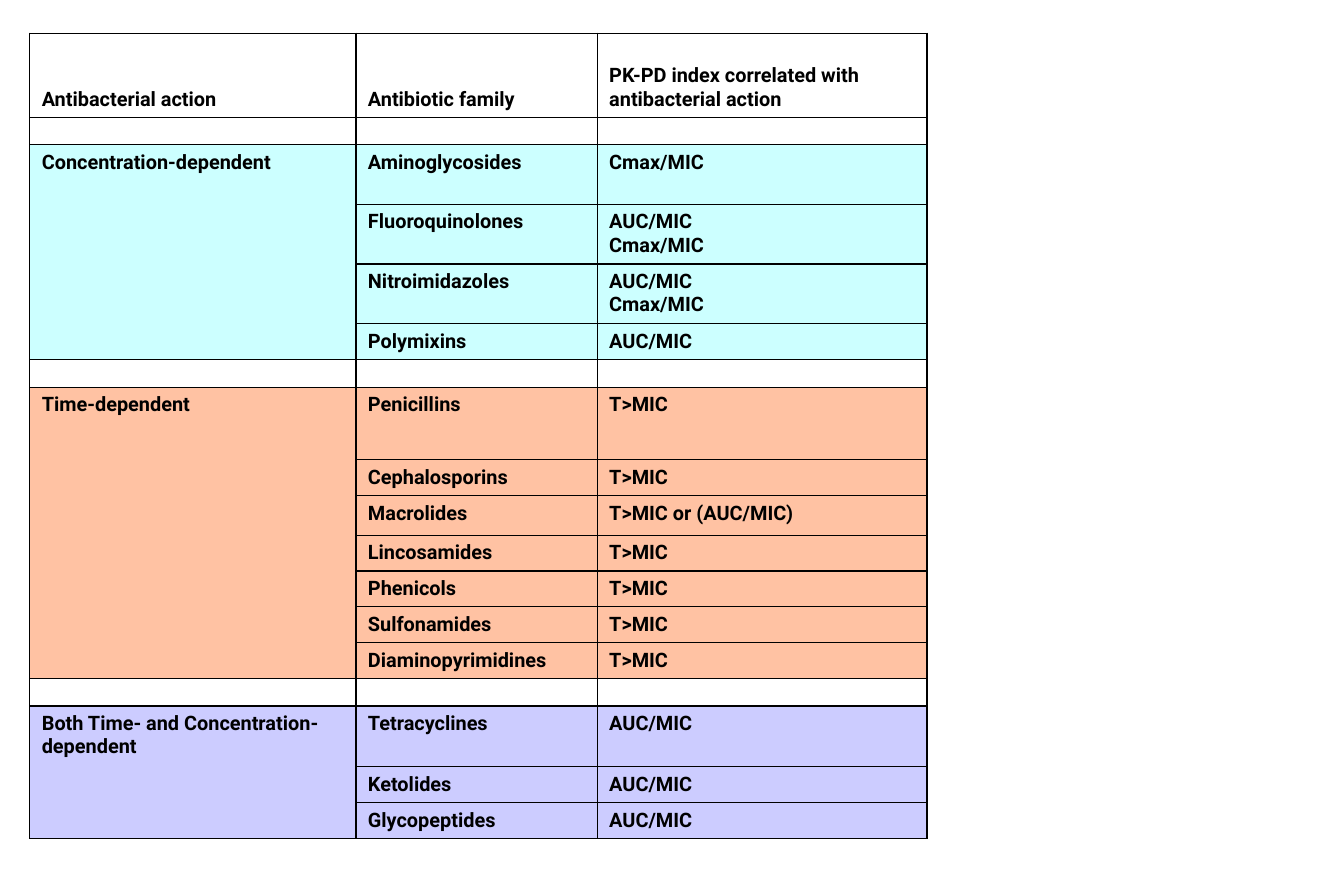
from lxml.etree import SubElement
from pptx import Presentation
from pptx.dml.color import RGBColor
from pptx.enum.text import MSO_ANCHOR as Anchor
from pptx.oxml.ns import qn
from pptx.util import Emu, Pt

BLACK = RGBColor(0x00, 0x00, 0x00)
CYAN = RGBColor(0xCC, 0xFF, 0xFF)
ORANGE = RGBColor(0xFF, 0xC2, 0xA3)
LILAC = RGBColor(0xCC, 0xCC, 0xFF)

HEADER = ["Antibacterial action", "Antibiotic family",
          "PK-PD index correlated with antibacterial action"]
HEADER_H, GAP_H = 70, 23
COLUMNS = [273, 202, 276]
GROUPS = [
    ("Concentration-dependent", CYAN, [
        ("Aminoglycosides", "Cmax/MIC", 50),
        ("Fluoroquinolones", "AUC/MIC\nCmax/MIC", 50),
        ("Nitroimidazoles", "AUC/MIC\nCmax/MIC", 50),
        ("Polymixins", "AUC/MIC", 30)]),
    ("Time-dependent", ORANGE, [
        ("Penicillins", "T>MIC", 61),
        ("Cephalosporins", "T>MIC", 30),
        ("Macrolides", "T>MIC or (AUC/MIC)", 33),
        ("Lincosamides", "T>MIC", 30),
        ("Phenicols", "T>MIC", 30),
        ("Sulfonamides", "T>MIC", 30),
        ("Diaminopyrimidines", "T>MIC", 30)]),
    ("Both Time- and Concentration-dependent", LILAC, [
        ("Tetracyclines", "AUC/MIC", 51),
        ("Ketolides", "AUC/MIC", 30),
        ("Glycopeptides", "AUC/MIC", 30)]),
]


def px(n):
    """Turn px, 100 to the inch, into EMU."""
    return Emu(n * 9144)


def set_borders(cell, top, bottom):
    """Draw black lines around a cell, with top and bottom widths in points."""
    tc_pr = cell._tc.get_or_add_tcPr()
    for side, width in (("L", 0.75), ("R", 0.75), ("T", top), ("B", bottom)):
        ln = SubElement(tc_pr, qn(f"a:ln{side}"), w=str(Pt(width)))
        fill = SubElement(ln, qn("a:solidFill"))
        SubElement(fill, qn("a:srgbClr"), val=str(BLACK))


def write_cell(cell, text, color):
    """Fill a cell and set its bold text, or shrink it when it is empty."""
    if color is None:
        cell.fill.background()
    else:
        cell.fill.solid()
        cell.fill.fore_color.rgb = color
    cell.margin_left = cell.margin_right = px(10)
    cell.margin_top = cell.margin_bottom = px(5 if text else 0)
    cell.text_frame.text = text
    for p in cell.text_frame.paragraphs:
        if not text:
            SubElement(p._p, qn("a:endParaRPr"), sz="800")
        for r in p.runs:
            r.font.name, r.font.size, r.font.bold = "Roboto", Pt(12), True
            r.font.color.rgb = BLACK


def add_index_table(s, x, y):
    """Add the table of antibiotic families at the given corner."""
    rows = [(HEADER, None, HEADER_H)]
    spans = []
    for action, color, families in GROUPS:
        rows.append(([""] * 3, None, GAP_H))
        spans.append((len(rows), len(rows) + len(families) - 1))
        for i, (family, index, h) in enumerate(families):
            rows.append(([action if i == 0 else "", family, index], color, h))
    total = sum(h for _, _, h in rows)
    table = s.shapes.add_table(len(rows), len(COLUMNS), px(x), px(y),
                               px(sum(COLUMNS)), px(total)).table
    table.first_row = table.horz_banding = False
    for column, w in zip(table.columns, COLUMNS):
        column.width = px(w)
    for first, last in spans:
        table.cell(first, 0).merge(table.cell(last, 0))
    final = spans[-1]
    for i, (texts, color, h) in enumerate(rows):
        table.rows[i].height = px(h)
        for j, text in enumerate(texts):
            cell = table.cell(i, j)
            at_end = i == final[1] or (i, j) == (final[0], 0)
            set_borders(cell, 1 if i == 0 else 0.75, 1 if at_end else 0.75)
            write_cell(cell, text, color)
            cell.vertical_anchor = Anchor.BOTTOM if i == 0 else Anchor.TOP


def main():
    """Build and save the slide."""
    prs = Presentation()
    prs.slide_width, prs.slide_height = px(1125), px(750)
    s = prs.slides.add_slide(prs.slide_layouts[6])
    add_index_table(s, 25, 28)
    prs.save("out.pptx")


if __name__ == "__main__":
    main()
